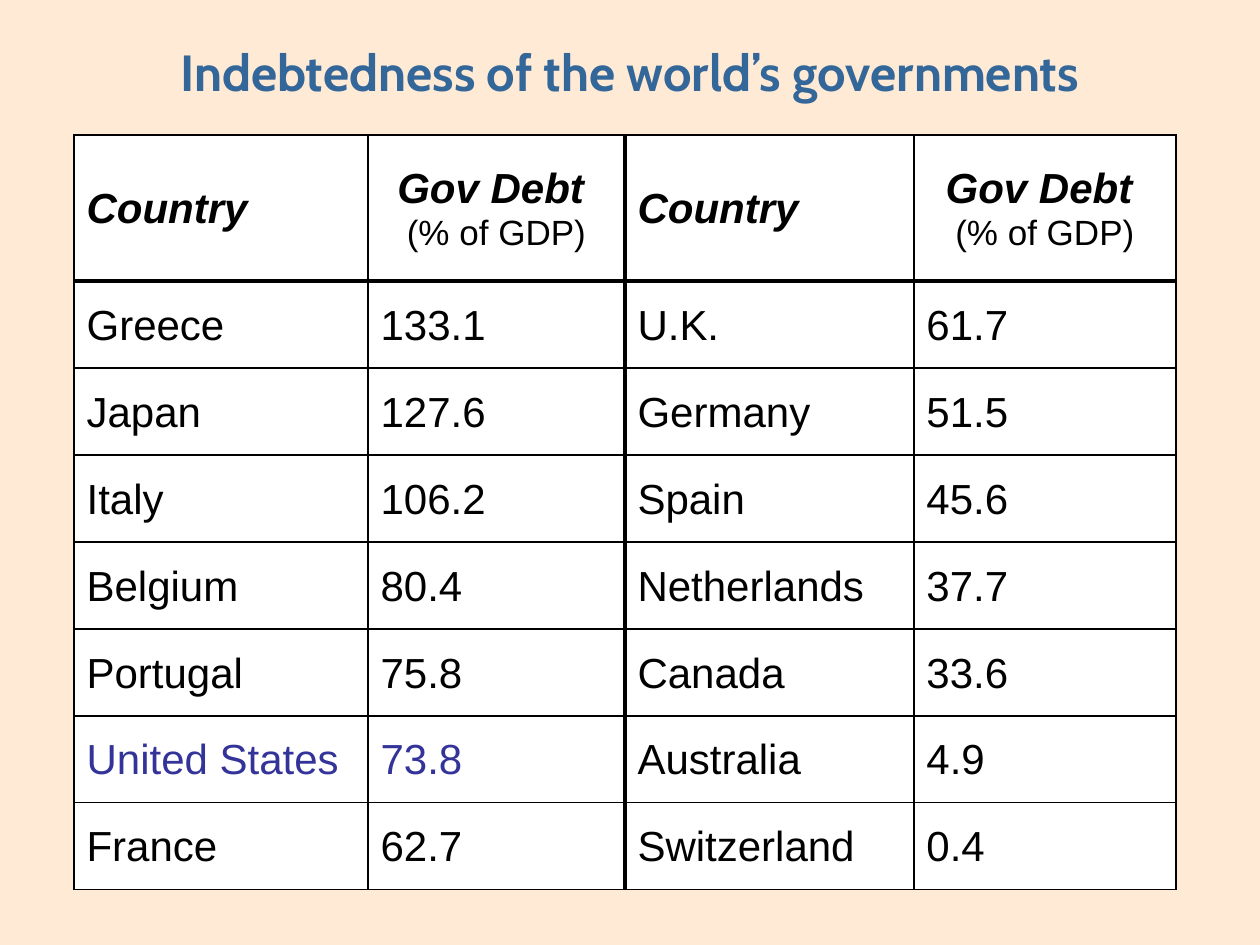
"""Build a slide with a table of government debt by country."""
import pptx
import pptx.util
import pptx.dml.color
import pptx.enum.text
import pptx.oxml

Pt = pptx.util.Pt
RGB = pptx.dml.color.RGBColor
MID = pptx.enum.text.MSO_ANCHOR.MIDDLE
ALIGN = pptx.enum.text.PP_ALIGN
NS = "http://schemas.openxmlformats.org/drawingml/2006/main"
CREAM = RGB(0xFF, 0xEA, 0xD5)
STEEL = RGB(0x33, 0x66, 0x99)
BLUE = RGB(0x33, 0x33, 0x99)
BLACK = RGB(0, 0, 0)
WHITE = RGB(0xFF, 0xFF, 0xFF)

HEAD = ("Country", "Gov Debt ", "Country", "Gov Debt ")
ROWS = (
    HEAD,
    ("Greece", "133.1", "U.K.", "61.7"),
    ("Japan", "127.6", "Germany", "51.5"),
    ("Italy", "106.2", "Spain", "45.6"),
    ("Belgium", "80.4", "Netherlands", "37.7"),
    ("Portugal", "75.8", "Canada", "33.6"),
    ("United States", "73.8", "Australia", "4.9"),
    ("France", "62.7", "Switzerland", "0.4"),
)
COLS = (294, 257, 289, 262)
HIGH = (146,) + (87,) * 7


def px(num):
    return pptx.util.Emu(num * 914400 // 126)


def write(para, text, color, **form):
    run = para.add_run()
    run.text = text
    run.font.color.rgb = color
    for key, val in form.items():
        setattr(run.font, key, val)


deck = pptx.Presentation()
deck.slide_width, deck.slide_height = px(1260), px(945)
slide = deck.slides.add_slide(deck.slide_layouts[5])
slide.background.fill.solid()
slide.background.fill.fore_color.rgb = CREAM

title = slide.shapes.title
place = {"left": 0, "top": 28, "width": 1260, "height": 83}
for key, val in place.items():
    setattr(title, key, px(val))
frame = title.text_frame
frame.vertical_anchor = MID
for side in ("left", "top", "right", "bottom"):
    setattr(frame, "margin_" + side, 0)
para = frame.paragraphs[0]
para.alignment = ALIGN.CENTER
para.line_spacing = 1.05
write(para, "Indebtedness of the world’s governments", STEEL,
      name="Cabin", size=Pt(29), bold=True)

table = slide.shapes.add_table(
    len(ROWS), len(COLS), px(74), px(135), px(sum(COLS)), px(sum(HIGH))).table
table.horz_banding = False
for col, wide in zip(table.columns, COLS):
    col.width = px(wide)
for row, tall in zip(table.rows, HIGH):
    row.height = px(tall)

for r, row in enumerate(ROWS):
    for c, text in enumerate(row):
        cell = table.cell(r, c)
        cell.vertical_anchor = MID
        cell.fill.solid()
        cell.fill.fore_color.rgb = WHITE
        para = cell.text_frame.paragraphs[0]
        para.line_spacing = 1.05
        top = r == 0
        color = BLUE if row[0] == "United States" and c < 2 else BLACK
        write(para, text, color, name="Arial", size=Pt(24), bold=top, italic=top)
        if top and c % 2:
            para.alignment = ALIGN.CENTER
            para.add_line_break()
            write(para, "(% of GDP)", BLACK, name="Arial", size=Pt(20),
                  bold=False, italic=False)
        thick = {"L": c == 2, "R": c == 1, "T": r == 1, "B": top}
        for i, (side, bold) in enumerate(thick.items()):
            line = pptx.oxml.parse_xml(
                f'<a:ln{side} xmlns:a="{NS}" w="{Pt(2.25 if bold else 1)}">'
                f'<a:solidFill><a:srgbClr val="{BLACK}"/></a:solidFill></a:ln{side}>')
            cell._tc.get_or_add_tcPr().insert(i, line)

deck.save("out.pptx")
